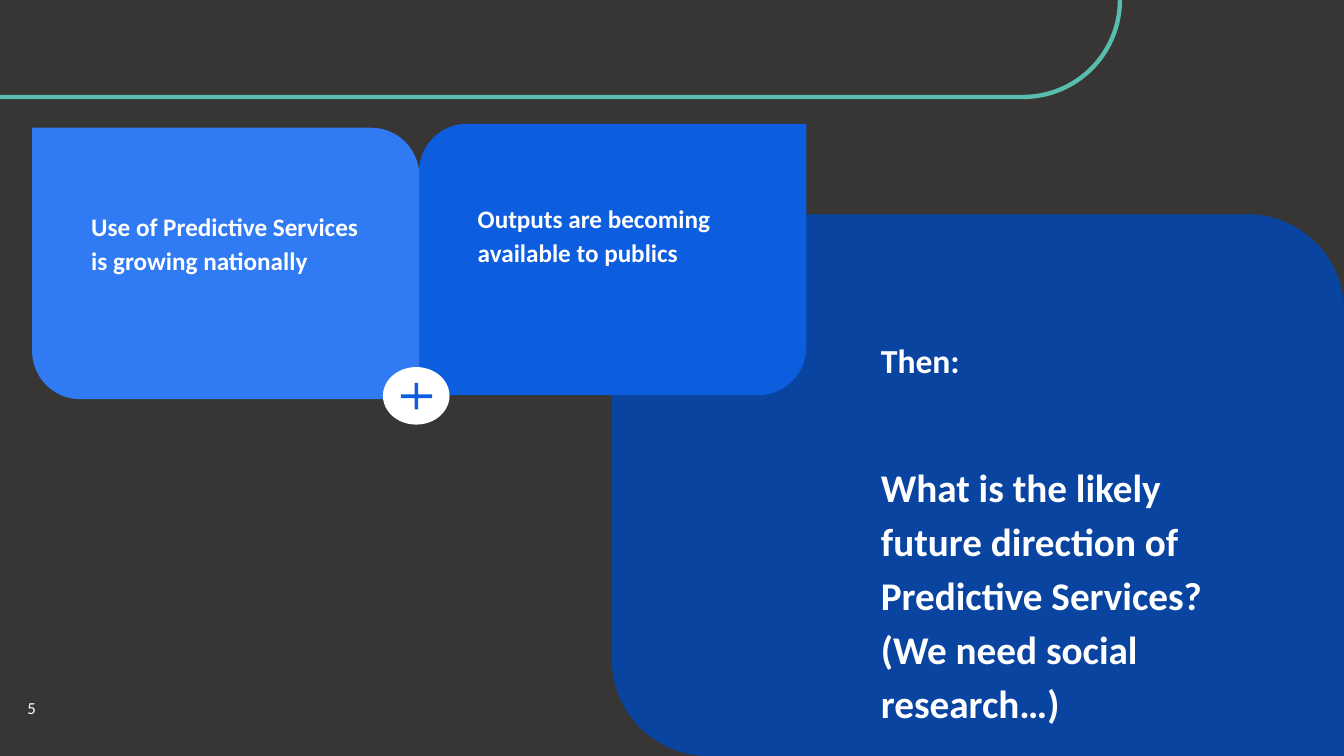
from dataclasses import dataclass
from math import cos, pi, sin

from pptx import Presentation, util as u
from pptx.dml.color import RGBColor
from pptx.enum import shapes as sh, text as tx


@dataclass(frozen=True)
class Theme:
    font: str = "Calibri"
    back: str = "373634"
    line: str = "58BCAF"
    white: str = "FFFFFF"
    deep: str = "0944A1"
    blue: str = "0D5DDF"
    light: str = "307BF3"
    page: int = 12
    card: int = 18
    lead: int = 24
    ask: int = 28


T = Theme()
KIND = sh.MSO_SHAPE

# Lengths in cm: left, top, width, height
CARDS = [
    ((15.42, 5.4, 18.45, 13.65), (0, 0.178), T.deep),
    ((10.56, 3.12, 9.76, 6.84), (0.178, 0), T.blue),
    ((0.81, 3.22, 9.76, 6.84), (0, 0.178), T.light),
]
# Wording, box, type size, line spacing, space after
TEXTS = [
    ("Then:", (21.95, 8.31, 10.13, 2.62), T.lead, 1, 0),
    ("What is the likely future direction of Predictive Services? "
     "(We need social research…)", (21.95, 11.25, 10.13, 4.9), T.ask, 1.15, 12),
    ("Outputs are becoming available to publics",
     (11.79, 4.75, 7.26, 3.58), T.card, 1.15, 16),
    ("Use of Predictive Services is growing nationally",
     (2.05, 4.95, 7.26, 3.35), T.card, 1.15, 16),
]
BADGE = [
    (KIND.OVAL, (9.65, 9.25, 1.68, 1.45), (), T.white),
    (KIND.MATH_PLUS, (9.96, 9.53, 1.07, 0.91), (0.099,), T.blue),
]
PAGE = ("5", (0.69, 17.48, 1.6, 0.69), T.page, 1, 0)
BEND = (25.78, 2.39, 2.5)  # centre from left, inner and outer radius


def cm(box):
    return [u.Cm(n) for n in box]


def paint(shape, color):
    shape.shadow.inherit = False
    shape.fill.solid()
    shape.fill.fore_color.rgb = RGBColor.from_string(color)
    shape.line.fill.background()


def block(slide, kind, box, adj, color):
    shape = slide.shapes.add_shape(kind, *cm(box))
    for i, value in enumerate(adj):
        shape.adjustments[i] = value
    paint(shape, color)


def write(slide, words, box, size, lead, after, pad=(0.25,) * 4, bold=True):
    frame = slide.shapes.add_textbox(*cm(box)).text_frame
    frame.word_wrap = True
    (frame.margin_left, frame.margin_top,
     frame.margin_right, frame.margin_bottom) = cm(pad)
    para = frame.paragraphs[0]
    para.text = words
    para.line_spacing = lead
    para.space_after = u.Pt(after)
    font = para.font
    font.name, font.size, font.bold = T.font, u.Pt(size), bold
    font.color.rgb = RGBColor.from_string(T.white)
    return frame


def band(slide, mid, inner, outer, steps=32):
    """Draw the thin band that runs from the left edge and bends up."""
    def arc(r):
        turns = [pi / 2 * i / steps for i in range(steps + 1)]
        return [(mid + r * cos(a), r * sin(a)) for a in turns]

    dots = arc(outer) + [(0, outer), (0, inner)] + arc(inner)[::-1]
    first, *rest = [(u.Cm(x), u.Cm(y)) for x, y in dots]
    path = slide.shapes.build_freeform(*first)
    path.add_line_segments(rest, close=True)
    paint(path.convert_to_shape(), T.line)


def main():
    deck = Presentation()
    deck.slide_width, deck.slide_height = cm((33.87, 19.05))
    slide = deck.slides.add_slide(deck.slide_layouts[6])
    fill = slide.background.fill
    fill.solid()
    fill.fore_color.rgb = RGBColor.from_string(T.back)

    band(slide, *BEND)
    page = write(slide, *PAGE, pad=(0, 0.13, 0.25, 0.13), bold=False)
    page.vertical_anchor = tx.MSO_ANCHOR.MIDDLE
    for box, adj, color in CARDS:
        block(slide, KIND.ROUND_2_DIAG_RECTANGLE, box, adj, color)
    for item in TEXTS:
        write(slide, *item)
    for part in BADGE:
        block(slide, *part)
    deck.save("out.pptx")


if __name__ == "__main__":
    main()
